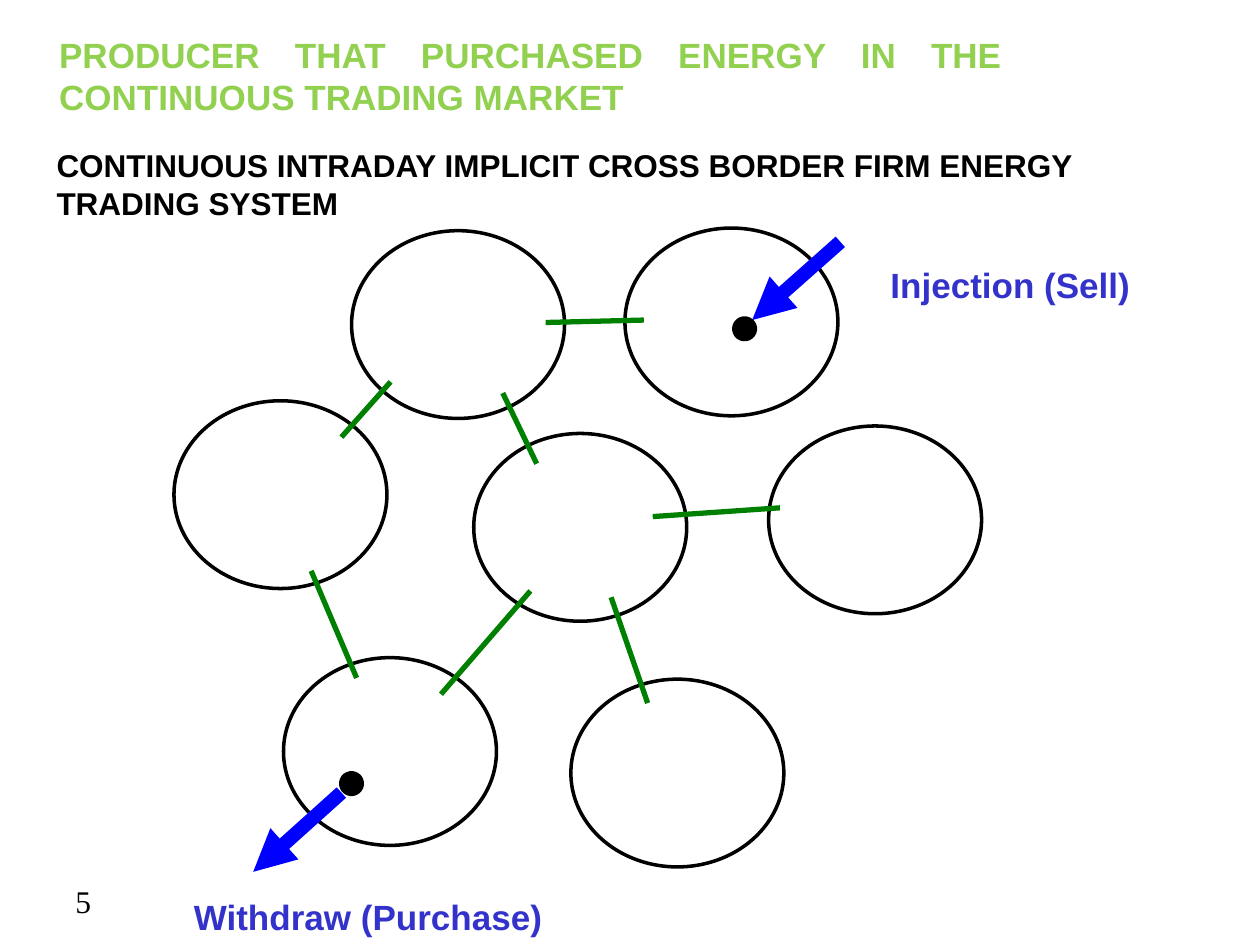
from lxml.etree import SubElement
from pptx import Presentation
from pptx.dml.color import RGBColor
from pptx.enum.shapes import MSO_CONNECTOR as LINK, MSO_SHAPE as SHAPE
from pptx.enum.text import MSO_ANCHOR as ANCHOR, MSO_AUTO_SIZE as FIT, PP_ALIGN as ALIGN
from pptx.oxml.ns import qn
from pptx.util import Pt

BLACK, GREEN, BLUE = "000000", "008000", "0000FF"
NODE = 121.7, 107.3
DOT = 7.2, 7.2

# Offsets inside the network box
NODES = [(101.9, 1.8), (258.1, 0.3), (0.4, 99), (171.7, 117.7),
         (340.2, 113.4), (63, 245.8), (227.2, 258.1)]
LINKS = [(124.2, 88.2, 96.1, 119.8), (268.9, 52.9, 212.8, 54.3),
         (188.3, 94.6, 207.7, 135), (78.8, 196.2, 104.8, 257.4),
         (346.7, 160.2, 274, 165.2), (250.2, 211.3, 271.1, 271.8),
         (204.1, 207.7, 153, 266.7)]
# Arrow, dot, label box, label
TRADES = [
    ((381.2, 8.2, 330.8, 52.9), (322.9, 54.3),
     (402.8, 16.9, 169.9, 31.7), "Injection (Sell)"),
    ((96.1, 322.9, 45.7, 368.2), (98.3, 314.2),
     (4.7, 378.3, 228.2, 31.7), "Withdraw (Purchase)"),
]


def color(code):
    return RGBColor.from_string(code)


def pts(*nums):
    return [Pt(n) for n in nums]


def write(frame, text, size, code, name="Arial", bold=True, align=ALIGN.LEFT):
    frame.word_wrap = True
    frame.auto_size = FIT.NONE
    para = frame.paragraphs[0]
    para.alignment = align
    run = para.add_run()
    run.text = text
    form = {"size": Pt(size), "name": name, "bold": bold}
    for key, val in form.items():
        setattr(run.font, key, val)
    run.font.color.rgb = color(code)


def label(slide, box, *args, **form):
    write(slide.shapes.add_textbox(*pts(*box)).text_frame, *args, **form)


def stroke(item, code, width):
    item.line.color.rgb = color(code)
    item.line.width = Pt(width)


def oval(slide, x, y, size, width):
    item = slide.shapes.add_shape(SHAPE.OVAL, *pts(x, y, *size))
    item.shadow.inherit = False
    item.fill.background()
    stroke(item, BLACK, width)


def link(slide, x, y, ends, code, width, arrow=False):
    x1, y1, x2, y2 = ends
    item = slide.shapes.add_connector(
        LINK.STRAIGHT, *pts(x + x1, y + y1, x + x2, y + y2))
    stroke(item, code, width)
    if arrow:
        SubElement(item.line._get_or_add_ln(), qn("a:tailEnd"), type="triangle")
    SubElement(item._element.spPr, qn("a:effectLst"))


def title(slide, box):
    item = slide.shapes.title
    for key, val in zip(("left", "top", "width", "height"), pts(*box)):
        setattr(item, key, val)
    frame = item.text_frame
    frame.vertical_anchor = ANCHOR.MIDDLE
    write(frame, "PRODUCER THAT PURCHASED ENERGY IN THE CONTINUOUS TRADING MARKET",
          20, "92D050", align=ALIGN.JUSTIFY)


def network(slide, x, y):
    """Market areas, their links and the two trades."""
    for dx, dy in NODES:
        oval(slide, x + dx, y + dy, NODE, 2)
    for ends in LINKS:
        link(slide, x, y, ends, GREEN, 3)
    for ends, (dx, dy), (left, top, wide, high), text in TRADES:
        link(slide, x, y, ends, BLUE, 8, arrow=True)
        oval(slide, x + dx, y + dy, DOT, 7.25)
        label(slide, (x + left, y + top, wide, high), text, 20, "3333CC")


def main():
    deck = Presentation()
    deck.slide_width, deck.slide_height = pts(720, 540)
    slide = deck.slides.add_slide(deck.slide_layouts[5])
    title(slide, (26.6, 20.9, 553, 44.6))
    label(slide, (25.2, 79.9, 678.2, 50.4),
          "CONTINUOUS INTRADAY IMPLICIT CROSS BORDER FIRM ENERGY TRADING SYSTEM",
          18, BLACK)
    network(slide, 99, 130)
    label(slide, (36, 500.4, 167.8, 28.8), "5", 18, BLACK,
          name="Times New Roman", bold=False)
    deck.save("out.pptx")


if __name__ == "__main__":
    main()
